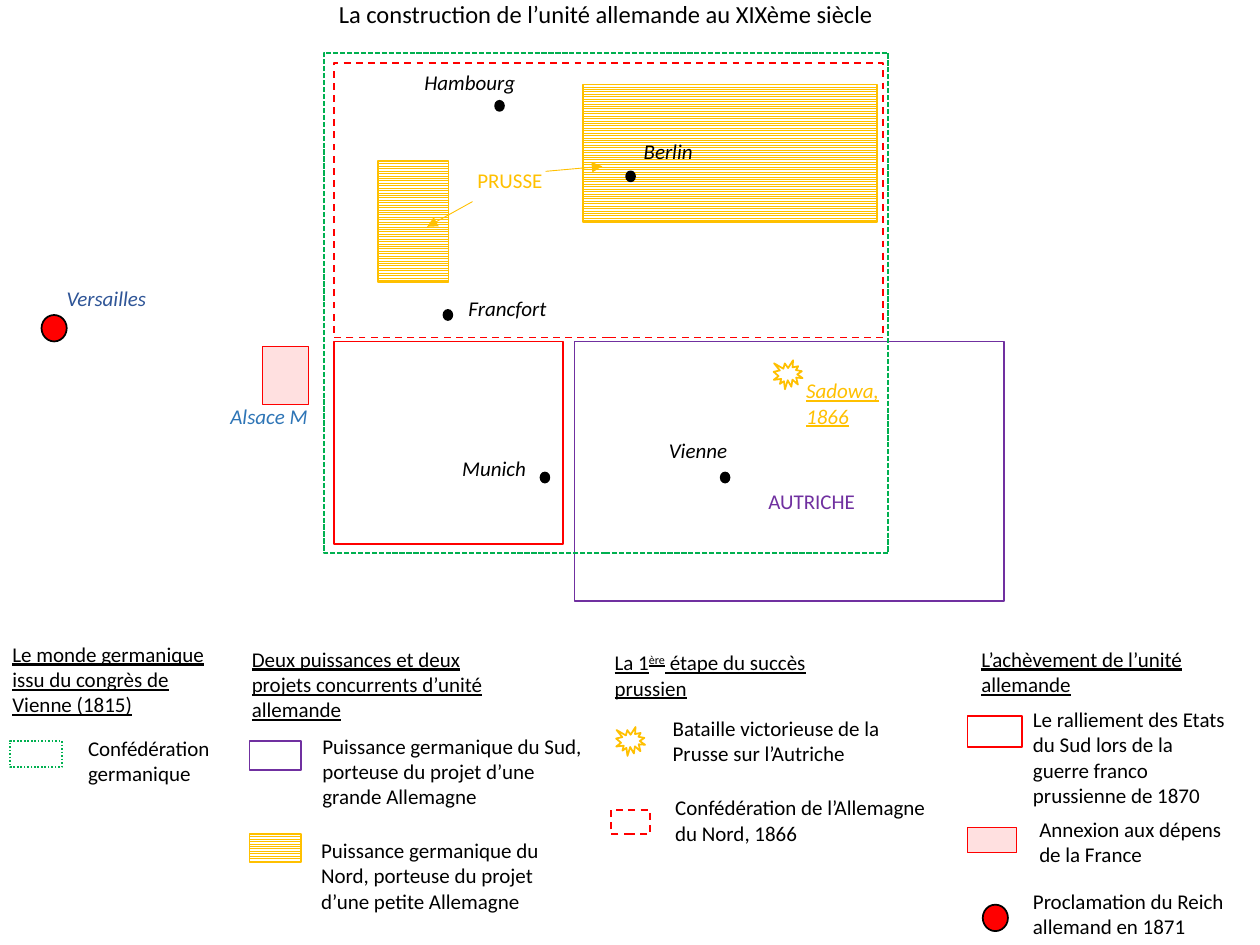
from pptx import Presentation
from pptx import util as u
from pptx.dml import color as col
from pptx.enum import dml, shapes, text
from pptx.oxml import ns
from lxml import etree

HUES = {"black": "000000", "white": "FFFFFF", "gold": "FFC000", "red": "FF0000",
        "green": "00B050", "purple": "7030A0", "blue": "2E75B6", "navy": "2F5597"}
RECT = shapes.MSO_SHAPE.RECTANGLE
OVAL = shapes.MSO_SHAPE.OVAL
SEAL = shapes.MSO_SHAPE.EXPLOSION1
DASH = dml.MSO_LINE

# Map signs: preset, line colour, line width, dash, fill
SIGNS = {
    "prussia": (RECT, "gold", 1, None, "hatch"),
    "austria": (RECT, "purple", 1, None, None),
    "union": (RECT, "green", 1, DASH.SQUARE_DOT, None),
    "union key": (RECT, "green", 1, DASH.ROUND_DOT, None),
    "north": (RECT, "red", 1, DASH.DASH, None),
    "south": (RECT, "red", 1, None, None),
    "annexed": (RECT, "red", 0.5, None, "tint"),
    "battle": (SEAL, "gold", 1, None, None),
    "city": (OVAL, "black", 1, None, "black"),
    "reich": (OVAL, "black", 1, None, "red"),
}

deck = Presentation()
deck.slide_width, deck.slide_height = u.Inches(10), u.Inches(7.5)
slide = deck.slides.add_slide(deck.slide_layouts[6])


def rgb(hue):
    return col.RGBColor.from_string(HUES[hue])


def label(words, x, y, w, h, hue="black", size=12, slant=None, under=None, wrap=True):
    box = slide.shapes.add_textbox(*map(u.Inches, (x, y, w, h)))
    frame = box.text_frame
    frame.text = words
    frame.word_wrap = wrap
    frame.auto_size = text.MSO_AUTO_SIZE.SHAPE_TO_FIT_TEXT
    para = frame.paragraphs[0]
    if "^" in words:  # the part between carets is raised
        para.text = ""
        for n, part in enumerate(words.split("^")):
            run = para.add_run()
            run.text = part
            if n % 2:
                run.font._element.set("baseline", "30000")
    for run in para.runs:
        font = run.font
        font.name, font.size = "Calibri", u.Pt(size)
        font.italic, font.underline = slant, under
        font.color.rgb = rgb(hue)


# Territories, cities and legend keys
for sign, *spot in [
    ("prussia", 4.63, 0.67, 2.33, 1.09),
    ("prussia", 3, 1.28, 0.56, 0.96),
    ("austria", 4.56, 2.71, 3.41, 2.06),
    ("union", 2.57, 0.42, 4.48, 3.97),
    ("city", 4.97, 1.36, 0.07, 0.08),
    ("city", 3.93, 0.8, 0.07, 0.08),
    ("city", 4.29, 3.75, 0.07, 0.08),
    ("city", 3.52, 2.46, 0.07, 0.08),
    ("city", 5.72, 3.75, 0.07, 0.08),
    ("north", 2.65, 0.5, 4.36, 2.18),
    ("south", 2.65, 2.71, 1.82, 1.61),
    ("battle", 6.14, 2.86, 0.23, 0.23),
    ("annexed", 2.08, 2.75, 0.37, 0.46),
    ("reich", 0.33, 2.5, 0.2, 0.21),
    ("union key", 0.08, 5.88, 0.41, 0.21),
    ("austria", 1.98, 5.88, 0.41, 0.23),
    ("prussia", 1.98, 6.62, 0.41, 0.22),
    ("battle", 4.89, 5.77, 0.23, 0.23),
    ("north", 4.85, 6.43, 0.31, 0.19),
    ("south", 7.68, 5.68, 0.43, 0.25),
    ("annexed", 7.68, 6.57, 0.39, 0.2),
    ("reich", 7.8, 7.18, 0.2, 0.21),
]:
    kind, edge, width, dash, fill = SIGNS[sign]
    shape = slide.shapes.add_shape(kind, *map(u.Inches, spot))
    shape.shadow.inherit = False
    shape.line.color.rgb = rgb(edge)
    shape.line.width = u.Pt(width)
    if dash:
        shape.line.dash_style = dash
    if fill is None:
        shape.fill.background()
    elif fill == "hatch":
        shape.fill.patterned()
        shape.fill.pattern = dml.MSO_PATTERN.LIGHT_HORIZONTAL
        shape.fill.fore_color.rgb = rgb("gold")
        shape.fill.back_color.rgb = rgb("white")
    else:
        shape.fill.solid()
        shape.fill.fore_color.rgb = rgb("red" if fill == "tint" else fill)
        if fill == "tint":
            shade = shape._element.spPr.find(ns.qn("a:solidFill"))[0]
            etree.SubElement(shade, ns.qn("a:alpha"), val="12000")

# Arrows from the name to both parts of Prussia
for ends in [(4.33, 1.36, 4.78, 1.32), (3.75, 1.6, 3.39, 1.8)]:
    arrow = slide.shapes.add_connector(shapes.MSO_CONNECTOR.STRAIGHT, *map(u.Inches, ends))
    arrow.line.color.rgb = rgb("gold")
    arrow.line.width = u.Pt(0.5)
    etree.SubElement(arrow.line._get_or_add_ln(), ns.qn("a:tailEnd"), type="triangle")
    etree.SubElement(arrow._element.spPr, ns.qn("a:effectLst"))

# Title and powers
label("La construction de l’unité allemande au XIXème siècle",
      2.59, -0.06, 4.48, 0.34, size=14, wrap=False)
label("AUTRICHE", 6, 3.83, 0.9, 0.3, "purple", wrap=False)
label("PRUSSE", 3.69, 1.28, 0.73, 0.3, "gold", wrap=False)

# Places
for name, x, y, w, hue in [
    ("Berlin", 5.01, 1.05, 0.65, "black"),
    ("Hambourg", 3.27, 0.5, 0.95, "black"),
    ("Francfort", 3.62, 2.3, 0.84, "black"),
    ("Munich", 3.57, 3.57, 0.76, "black"),
    ("Vienne", 5.21, 3.42, 0.69, "black"),
    ("Alsace M", 1.73, 3.15, 0.99, "blue"),
]:
    label(name, x, y, w, 0.3, hue, slant=True)
label("Versailles", 0.43, 2.22, 0.84, 0.3, "navy", slant=True, wrap=False)
label("Sadowa, 1866", 6.3, 2.95, 0.83, 0.5, "gold", slant=True, under=True)

# Legend headings
for words, *spot in [
    ("Le monde germanique issu du congrès de Vienne (1815)", 0, 5.04, 1.74, 0.71),
    ("Deux puissances et deux projets concurrents d’unité allemande", 1.9, 5.08, 2.3, 0.71),
    ("La 1^ère^ étape du succès prussien", 4.78, 5.11, 1.97, 0.5),
    ("L’achèvement de l’unité allemande", 7.69, 5.08, 1.97, 0.5),
]:
    label(words, *spot, under=True)

# Legend entries
for words, *spot in [
    ("Confédération germanique", 0.6, 5.79, 1.21, 0.5),
    ("Puissance germanique du Sud, porteuse du projet d’une grande Allemagne",
     2.46, 5.77, 2.29, 0.71),
    ("Puissance germanique du Nord, porteuse du projet d’une petite Allemagne",
     2.45, 6.6, 2, 0.71),
    ("Bataille victorieuse de la Prusse sur l’Autriche", 5.24, 5.63, 2.29, 0.5),
    ("Confédération de l’Allemagne du Nord, 1866", 5.26, 6.26, 2.29, 0.5),
    ("Le ralliement des Etats du Sud lors de la guerre franco prussienne de 1870",
     8.1, 5.56, 1.73, 0.91),
    ("Annexion aux dépens de la France", 8.15, 6.43, 1.73, 0.5),
    ("Proclamation du Reich allemand en 1871", 8.1, 7, 1.73, 0.5),
]:
    label(words, *spot)

deck.save("out.pptx")
